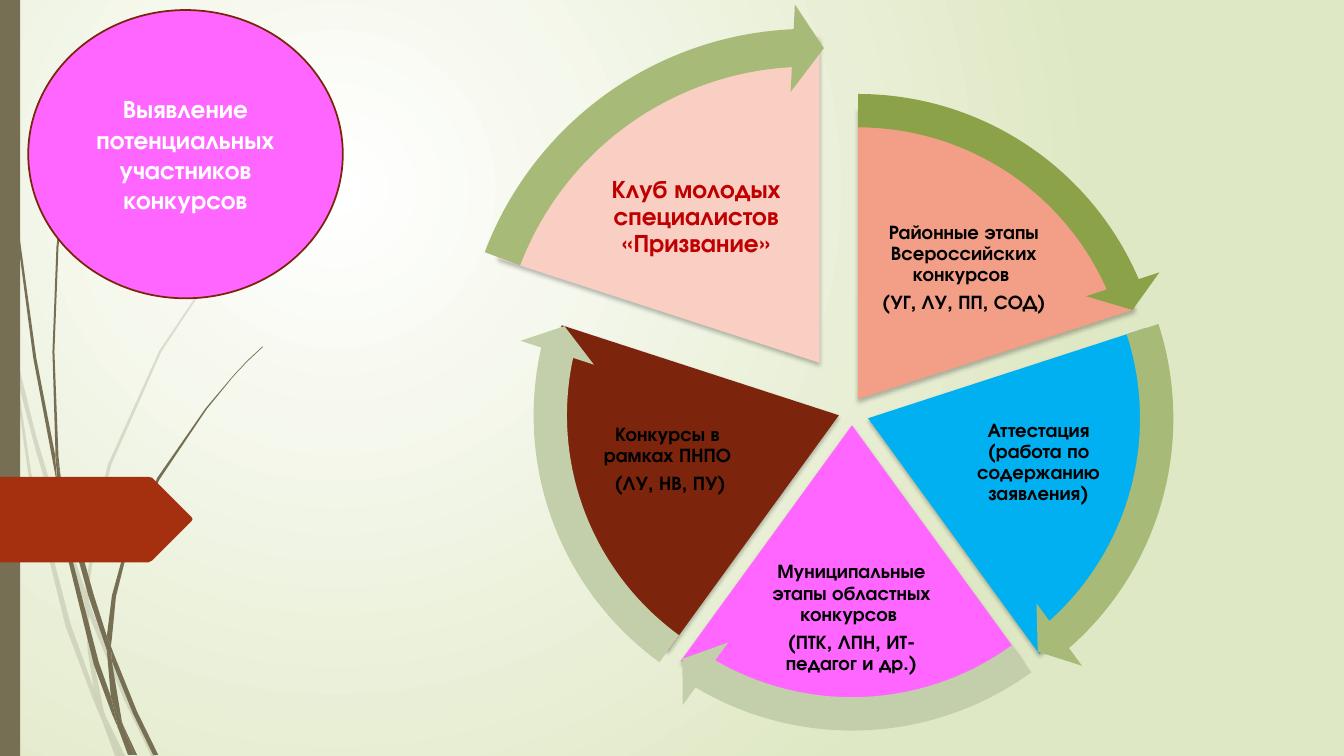
from lxml import etree
from pptx import Presentation
from pptx import util as u
from pptx.dml.color import RGBColor
from pptx.enum import shapes, text
from pptx.oxml.ns import qn

W, H = 13.33, 7.5
FONT = "TeX Gyre Adventor"
STEM, TAG = "766F54", "A53010"

# Corner points of the grass strands: pale ones behind, solid ones in front
PALE = [
    [(0.11, 3.5), (0.09, 3.22), (0, 2.82), (0, 2.99), (0.1, 3.44)],
    [(0.58, 5.22), (0.84, 5.99), (0.85, 5.86), (0.62, 5.2), (0.36, 4.33), (0.14, 3.45),
     (0.17, 3.76), (0.36, 4.49)],
    [(0.92, 6.07), (0.88, 5.96), (0.88, 6.1), (1.23, 6.94), (1.5, 7.5), (1.55, 7.5), (1.27, 6.92)],
    [(1.19, 7.5), (1.24, 7.5), (1.05, 7.11)],
    [(0.93, 6.83), (0.7, 6.19), (0.31, 4.69), (0.17, 3.76), (0.11, 3.5), (0.28, 4.7),
     (0.65, 6.21), (0.92, 6.93), (1.01, 7.14), (0.99, 7.07)],
    [(0.84, 5.99), (0.87, 6.46), (0.93, 6.83), (0.96, 6.92), (1.05, 7.11), (1.03, 7.06),
     (0.91, 6.46), (0.88, 6.1), (0.88, 6.08)],
    [(0.88, 5.84), (0.97, 5.22), (1.1, 4.62), (1.6, 3.49), (2.29, 2.45), (2.68, 1.98), (2.9, 1.75),
     (3.12, 1.54), (3.12, 1.53), (2.89, 1.75), (2.68, 1.97), (2.28, 2.44), (1.58, 3.48),
     (1.07, 4.61), (0.93, 5.22), (0.85, 5.84), (0.85, 5.86), (0.88, 5.96)],
    [(1.01, 7.14), (1.14, 7.5), (1.19, 7.5)],
    [(0.88, 6.08), (0.88, 6.1), (0.88, 5.96), (0.85, 5.86), (0.84, 5.99)],
    [(0.96, 6.92), (0.93, 6.83), (0.99, 7.07), (1.01, 7.14), (1.19, 7.5), (1.05, 7.11)],
]
SOLID = [
    [(0.07, 1.1), (0.17, 2.33), (0.33, 3.55), (0.56, 4.77), (0.57, 4.81), (0.55, 4.57), (0.55, 4.53),
     (0.36, 3.55), (0.19, 2.32), (0.08, 1.09), (0.05, 0.48), (0.04, 0), (0.03, 0), (0.04, 0.48)],
    [(0.88, 5.92), (1.06, 6.45), (1.06, 6.33), (1.06, 6.31), (0.93, 5.9), (0.6, 4.72), (0.64, 5.05)],
    [(1.13, 6.49), (1.1, 6.41), (1.11, 6.56), (1.32, 7.08), (1.52, 7.49), (1.57, 7.49), (1.36, 7.06)],
    [(1.1, 6.91), (0.98, 6.57), (0.72, 5.56), (0.64, 5.05), (0.57, 4.77), (0.68, 5.57), (0.93, 6.59),
     (1.11, 7.08), (1.17, 7.22), (1.16, 7.17)],
    [(0.6, 4.72), (0.58, 4.53), (0.54, 3.49), (0.58, 2.45), (0.63, 1.93), (0.7, 1.41), (0.62, 1.93),
     (0.56, 2.45), (0.52, 3.49), (0.55, 4.49)],
    [(1.33, 7.49), (1.36, 7.49), (1.22, 7.19)],
    [(0.57, 4.77), (0.64, 5.05), (0.6, 4.72), (0.55, 4.49), (0.55, 4.53)],
    [(1.11, 6.33), (1.15, 5.92), (1.25, 5.52), (1.58, 4.76), (2.05, 4.06), (2.31, 3.74), (2.45, 3.59),
     (2.61, 3.44), (2.6, 3.44), (2.45, 3.58), (2.31, 3.73), (2.04, 4.05), (1.56, 4.74), (1.22, 5.51),
     (1.11, 5.91), (1.06, 6.31), (1.1, 6.41)],
    [(1.17, 7.22), (1.27, 7.49), (1.31, 7.49)],
    [(1.06, 6.45), (1.1, 6.91), (1.16, 7.06), (1.22, 7.19), (1.21, 7.16), (1.11, 6.56), (1.09, 6.51)],
    [(1.06, 6.45), (1.09, 6.51), (1.11, 6.56), (1.1, 6.41), (1.06, 6.31), (1.06, 6.33)],
    [(1.16, 7.06), (1.1, 6.91), (1.16, 7.17), (1.17, 7.22), (1.3, 7.49), (1.33, 7.49), (1.22, 7.19)],
]
PENTAGON = [(0, 4.73), (1.47, 4.73), (1.51, 4.74), (1.9, 5.13), (1.91, 5.15), (1.9, 5.17),
            (1.51, 5.56), (1.47, 5.58), (0, 5.58)]

TITLE = "Выявление потенциальных участников конкурсов"

# Sectors clockwise from the top:
# centre, sector size, sector fill, caption box, paragraphs, arrow fill
ROUND = (5.78, 5.78)
SECTORS = [
    ((8.51, 3.96), ROUND, "F39E87", (8.63, 2.04, 1.86, 1.24),
     ["Районные этапы Всероссийских конкурсов ", "(УГ, ЛУ, ПП, СОД)"], "8BA249"),
    ((8.61, 4.15), ROUND, "00B0F0", (9.44, 3.9, 1.72, 1.38),
     ["Аттестация (работа по содержанию заявления)"], "A7BA77"),
    ((8.45, 4.22), ROUND, "FF66FF", (7.62, 5.38, 1.65, 1.51),
     ["Муниципальные этапы областных конкурсов ", "(ПТК, ЛПН, ИТ-педагог и др.)"], "C3CFAA"),
    ((8.32, 4.12), ROUND, "7C240C", (5.76, 3.87, 1.72, 1.38),
     ["Конкурсы в рамках ПНПО", " (ЛУ, НВ, ПУ)"], "C3CFAA"),
    ((8.13, 3.6), (6.75, 6.47), "F9CFC3", (5.82, 1.46, 2.17, 1.39),
     ["Клуб молодых специалистов «Призвание»"], "A7BA77"),
]
CLUB = len(SECTORS) - 1  # the enlarged sector
# Angles in units of 100000/60000 degree
FULL, TOP, STEP, SWEEP, HEAD = 216, 162, 43.2, 39.92, 3.275

prs = Presentation()
prs.slide_width, prs.slide_height = u.Inches(W), u.Inches(H)
s = prs.slides.add_slide(prs.slide_layouts[6])


def rgb(value):
    return RGBColor.from_string(value)


def paint(sp, fill):
    sp.shadow.inherit = False
    sp.fill.solid()
    sp.fill.fore_color.rgb = rgb(fill)
    sp.line.fill.background()
    return sp


def child(parent, tag, **attrs):
    return etree.SubElement(parent, qn(tag), {k: str(v) for k, v in attrs.items()})


def shape(kind, box, fill):
    return paint(s.shapes.add_shape(kind, *map(u.Inches, box)), fill)


def outline(points, fill, alpha=None):
    start, *rest = [(u.Inches(x), u.Inches(y)) for x, y in points]
    fb = s.shapes.build_freeform(*start)
    fb.add_line_segments(rest, close=True)
    sp = paint(fb.convert_to_shape(), fill)
    if alpha:
        child(sp._element.spPr.find(".//" + qn("a:srgbClr")), "a:alpha", val=alpha * 1000)


def centred(centre, size):
    return (centre[0] - size[0] / 2, centre[1] - size[1] / 2, *size)


def write(sp, lines, size, color, spacing=None, after=0):
    tf = sp.text_frame
    tf.word_wrap = True
    tf.vertical_anchor = text.MSO_ANCHOR.MIDDLE
    for i, line in enumerate(lines):
        p = tf.add_paragraph() if i else tf.paragraphs[0]
        p.text = line
        p.alignment = text.PP_ALIGN.CENTER
        p.line_spacing = spacing
        p.space_after = u.Pt(after)
        p.font.name, p.font.size, p.font.bold = FONT, u.Pt(size), True
        p.font.color.rgb = rgb(color)
    return tf


# Background: radial gradient
fill = s.background.fill
fill.gradient()
for stop, color in zip(fill.gradient_stops, ("FFFFFF", "DFE8C4")):
    stop.color.rgb = rgb(color)
grad = s._element.find(".//" + qn("a:gradFill"))
grad.remove(grad.find(qn("a:lin")))
child(child(grad, "a:path", path="circle"), "a:fillToRect", l=50000, t=50000, r=100000, b=100000)

# Left edge decoration
for strand in PALE:
    outline(strand, STEM, 20)
for strand in SOLID:
    outline(strand, STEM)
shape(shapes.MSO_SHAPE.RECTANGLE, (0, 0, 0.2, H), STEM)
outline(PENTAGON, TAG)

# Title oval
oval = shape(shapes.MSO_SHAPE.OVAL, (0.28, 0.1, 3.12, 2.86), "FF66FF")
oval.line.color.rgb = rgb("7A240C")
oval.line.width = u.Pt(1.25)
write(oval, [TITLE], 18, "FFFFFF")

# Sectors with captions
for i, (centre, size, color, box, lines, _) in enumerate(SECTORS):
    pie = shape(shapes.MSO_SHAPE.PIE, centred(centre, size), color)
    pie.adjustments[0] = (TOP + i * STEP) % FULL
    pie.adjustments[1] = (TOP + (i + 1) * STEP) % FULL
    shadow = child(pie._element.spPr.find(qn("a:effectLst")), "a:outerShdw", blurRad=u.Pt(3),
                   dist=u.Pt(2), dir=90 * 60000, algn="ctr", rotWithShape=0)
    child(child(shadow, "a:srgbClr", val="000000"), "a:alpha", val=25000)
    caption = s.shapes.add_textbox(*map(u.Inches, box))
    tf = write(caption, lines, *((18, "C00000") if i == CLUB else (14, "000000")), 0.9, 5)
    tf.margin_left = tf.margin_right = tf.margin_top = tf.margin_bottom = u.Inches(0.02)

# Arrows around the sectors
for i, (centre, *_, color) in enumerate(SECTORS):
    box = (4.34, 0.04, 7.36, 7.35) if i == CLUB else centred(centre, (6.49, 6.49))
    arrow = shape(shapes.MSO_SHAPE.CIRCULAR_ARROW, box, color)
    start = (TOP + i * STEP) % FULL
    for k, value in enumerate((0.051, HEAD, (start + SWEEP) % FULL, start, 0.059)):
        arrow.adjustments[k] = value
    if i == CLUB:
        arrow.rotation = 2.7

prs.save("out.pptx")
